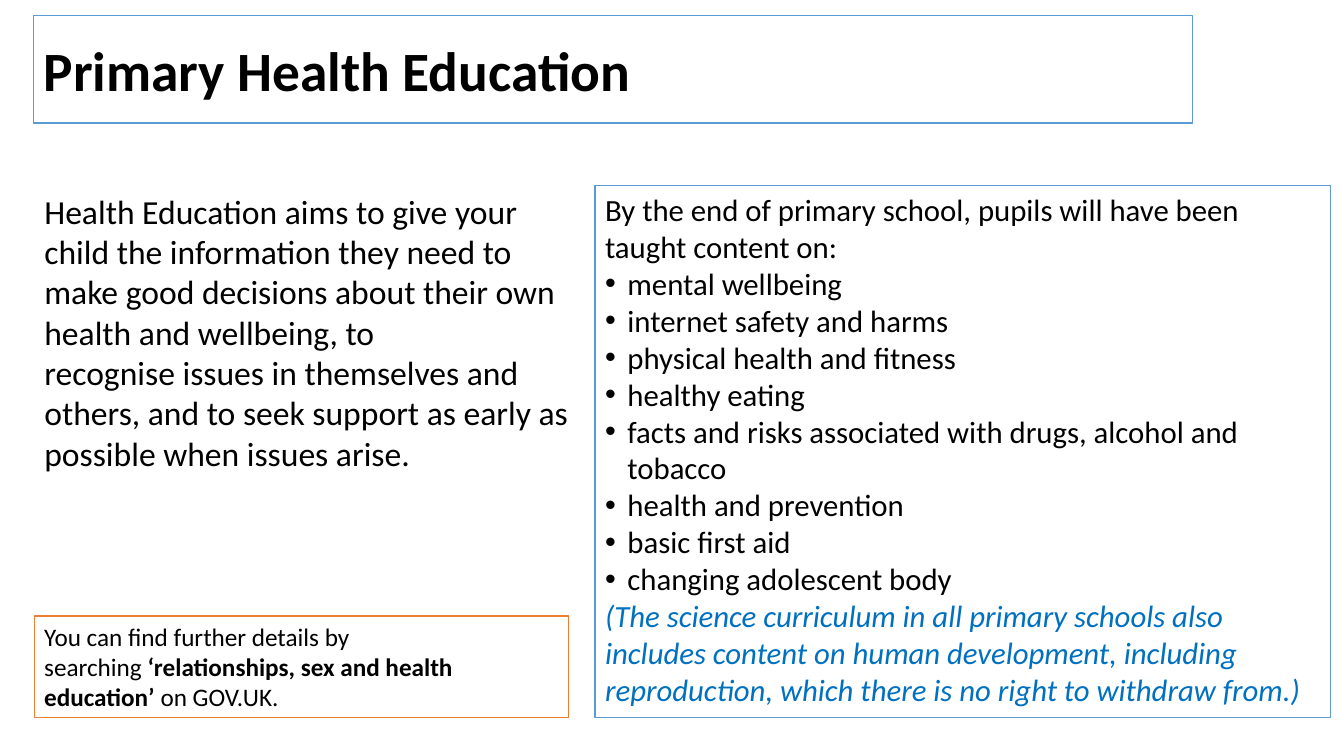
from lxml import etree
from pptx import Presentation
from pptx.dml.color import RGBColor
from pptx.enum.shapes import MSO_SHAPE
from pptx.enum.text import MSO_ANCHOR, MSO_AUTO_SIZE, PP_ALIGN
from pptx.oxml.ns import qn
from pptx.util import Pt

COLORS = {"white": "FFFFFF", "black": "000000", "blue": "5B9BD5",
          "orange": "ED7D31", "note": "0070C0"}
BULLET_INDENT = Pt(16)


def set_box(box, left, top, width, height, outline=None):
    box.left, box.top, box.width, box.height = Pt(left), Pt(top), Pt(width), Pt(height)
    if outline:
        box.fill.solid()
        box.fill.fore_color.rgb = RGBColor.from_string(COLORS["white"])
        box.line.color.rgb = RGBColor.from_string(COLORS[outline])
        box.line.width = Pt(1)
    box.text_frame.word_wrap = True
    box.text_frame.auto_size = MSO_AUTO_SIZE.NONE
    box.text_frame.vertical_anchor = MSO_ANCHOR.TOP


def add_line(frame, runs, size, color="black", bullet=False):
    """Fill the first paragraph, or a new one, with (text, bold, italic) runs."""
    line = frame.paragraphs[0]
    if line.runs:
        line = frame.add_paragraph()
    line.alignment = PP_ALIGN.LEFT
    line.line_spacing = 1.0
    line.space_before = line.space_after = Pt(0)
    props = line._p.get_or_add_pPr()
    props.set("marL", str(BULLET_INDENT if bullet else 0))
    props.set("indent", str(-BULLET_INDENT if bullet else 0))
    if bullet:
        etree.SubElement(props, qn("a:buChar")).set("char", "•")
    else:
        etree.SubElement(props, qn("a:buNone"))
    for text, bold, italic in runs:
        run = line.add_run()
        run.text = text
        run.font.name = "Calibri"
        run.font.size = Pt(size)
        run.font.bold, run.font.italic = bold, italic
        run.font.color.rgb = RGBColor.from_string(COLORS[color])


deck = Presentation()
deck.slide_width, deck.slide_height = Pt(960), Pt(540)
slide = deck.slides.add_slide(deck.slide_layouts[3])
heading, aims, content = slide.placeholders

# Title
set_box(heading, 24, 11, 828, 77, "blue")
heading.text_frame.vertical_anchor = MSO_ANCHOR.MIDDLE
add_line(heading.text_frame, [("Primary Health Education", True, False)], 39.6)

# Aims of health education
set_box(aims, 24.5, 132.5, 399.5, 227.5)
for text in (
    "Health Education aims to give your child the information they need to make "
    "good decisions about their own health and wellbeing, to",
    "recognise issues in themselves and others, and to seek support as early as "
    "possible when issues arise.",
):
    add_line(aims.text_frame, [(text, False, False)], 24)

# Content taught by the end of primary school
set_box(content, 425, 132.5, 525.5, 380, "blue")
add_line(content.text_frame, [(
    "By the end of primary school, pupils will have been taught content on:",
    False, False)], 22)
for topic in (
    "mental wellbeing",
    "internet safety and harms",
    "physical health and fitness",
    "healthy eating",
    "facts and risks associated with drugs, alcohol and tobacco",
    "health and prevention",
    "basic first aid",
    "changing adolescent body",
):
    add_line(content.text_frame, [(topic, False, False)], 22, bullet=True)
add_line(content.text_frame, [(
    "(The science curriculum in all primary schools also includes content on human "
    "development, including reproduction, which there is no right to withdraw from.)",
    False, True)], 22, "note")

# Further details
details = slide.shapes.add_shape(MSO_SHAPE.RECTANGLE, 0, 0, 0, 0)
details.shadow.inherit = False
set_box(details, 24.5, 440, 381.5, 72.5, "orange")
add_line(details.text_frame, [("You can find further details by", False, False)], 18)
add_line(details.text_frame, [
    ("searching ", False, False),
    ("‘relationships, sex and health education’ ", True, False),
    ("on GOV.UK.", False, False),
], 18)

deck.save("out.pptx")
